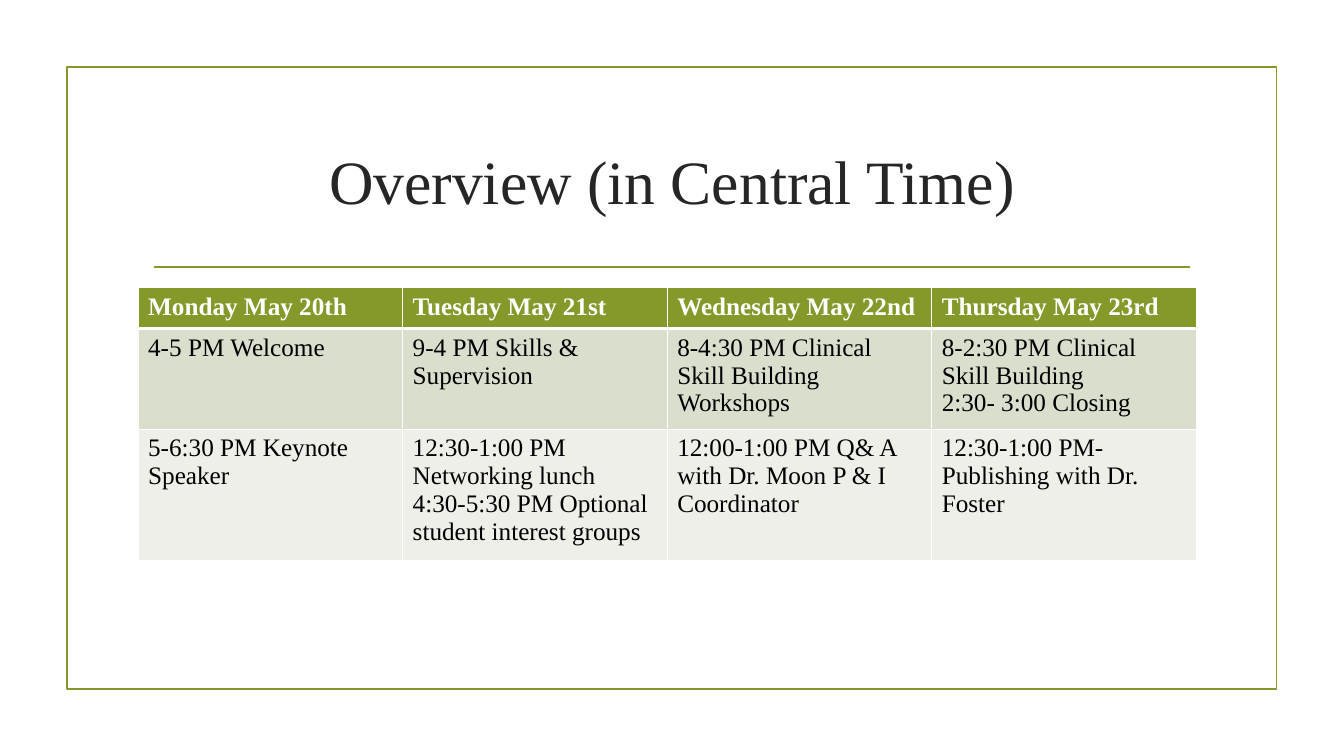
from dataclasses import dataclass

from lxml.etree import SubElement
from pptx import Presentation
from pptx.dml.color import RGBColor as Rgb
from pptx.enum.shapes import MSO_CONNECTOR as Connector, MSO_SHAPE as Preset
from pptx.enum.text import MSO_ANCHOR as Anchor, PP_ALIGN as Align
from pptx.oxml.ns import qn
from pptx.util import Cm, Pt


@dataclass(frozen=True)
class Theme:
    font: str = "Times New Roman"
    accent: str = "83992A"
    title_ink: str = "262626"
    body_ink: str = "000000"
    white: str = "FFFFFF"
    bands: tuple = ("D9DECD", "EDEFE8")
    title_size: float = 44
    table_size: float = 18
    rule_width: float = 1.25
    grid_width: float = 1
    header_rule_width: float = 3


class SlideBuilder:
    def __init__(self, slide, theme):
        self.slide = slide
        self.theme = theme

    def style_line(self, line):
        line.color.rgb = Rgb.from_string(self.theme.accent)
        line.width = Pt(self.theme.rule_width)

    def frame(self, left, top, width, height):
        border = self.slide.shapes.add_shape(
            Preset.RECTANGLE, Cm(left), Cm(top), Cm(width), Cm(height))
        border.shadow.inherit = False
        border.fill.background()
        self.style_line(border.line)

    def rule(self, left, right, y):
        divider = self.slide.shapes.add_connector(
            Connector.STRAIGHT, Cm(left), Cm(y), Cm(right), Cm(y))
        self.style_line(divider.line)
        SubElement(divider._element.spPr, qn("a:effectLst"))

    def add_text(self, paragraph, text, size, ink, bold=False):
        run = paragraph.add_run()
        run.text = text
        run.font.name = self.theme.font
        run.font.size = Pt(size)
        run.font.bold = bold
        run.font.color.rgb = Rgb.from_string(ink)

    def title(self, text, left, top, width, height):
        frame = self.slide.shapes.add_textbox(
            Cm(left), Cm(top), Cm(width), Cm(height)).text_frame
        frame.word_wrap = True
        frame.vertical_anchor = Anchor.MIDDLE
        heading = frame.paragraphs[0]
        heading.alignment = Align.CENTER
        self.add_text(heading, text, self.theme.title_size, self.theme.title_ink)

    def cell_borders(self, cell, top, bottom):
        # Border elements must come before the cell fill
        properties = cell._tc.get_or_add_tcPr()
        grid = self.theme.grid_width
        for side, width in (("L", grid), ("R", grid), ("T", top), ("B", bottom)):
            edge = SubElement(properties, qn(f"a:ln{side}"), w=str(Pt(width)))
            fill = SubElement(edge, qn("a:solidFill"))
            SubElement(fill, qn("a:srgbClr"), val=self.theme.white)

    def schedule(self, rows, left, top, width, heights):
        theme = self.theme
        table = self.slide.shapes.add_table(
            len(rows), len(rows[0]), Cm(left), Cm(top),
            Cm(width), Cm(sum(heights))).table
        for r, entries in enumerate(rows):
            table.rows[r].height = Cm(heights[r])
            header = r == 0
            band = theme.accent if header else theme.bands[(r - 1) % 2]
            ink = theme.white if header else theme.body_ink
            upper = theme.header_rule_width if r == 1 else theme.grid_width
            lower = theme.header_rule_width if header else theme.grid_width
            for c, sessions in enumerate(entries):
                cell = table.cell(r, c)
                self.cell_borders(cell, upper, lower)
                cell.fill.solid()
                cell.fill.fore_color.rgb = Rgb.from_string(band)
                for i, session in enumerate(sessions):
                    frame = cell.text_frame
                    paragraph = frame.add_paragraph() if i else frame.paragraphs[0]
                    self.add_text(paragraph, session, theme.table_size, ink, header)


# Each cell lists its sessions, one per paragraph
SCHEDULE = [
    [["Monday May 20th"], ["Tuesday May 21st"],
     ["Wednesday May 22nd"], ["Thursday May 23rd"]],
    [["4-5 PM Welcome"],
     ["9-4 PM Skills & Supervision"],
     ["8-4:30 PM Clinical Skill Building Workshops"],
     ["8-2:30 PM Clinical Skill Building", "2:30- 3:00 Closing"]],
    [["5-6:30 PM Keynote Speaker"],
     ["12:30-1:00 PM Networking lunch",
      "4:30-5:30 PM Optional student interest groups"],
     ["12:00-1:00 PM Q& A with Dr. Moon P & I Coordinator"],
     ["12:30-1:00 PM- Publishing with Dr. Foster"]],
]


def main():
    deck = Presentation()
    deck.slide_width, deck.slide_height = Cm(33.87), Cm(19.05)
    overview = SlideBuilder(deck.slides.add_slide(deck.slide_layouts[6]), Theme())

    # Frame and divider
    overview.frame(1.69, 1.69, 30.48, 15.68)
    overview.rule(3.89, 30, 6.73)

    # Title and schedule
    overview.title("Overview (in Central Time)", 3.61, 2.72, 26.67, 3.63)
    overview.schedule(SCHEDULE, 3.48, 7.25, 26.67, (1.03, 2.35, 3.08))

    deck.save("out.pptx")


if __name__ == "__main__":
    main()
